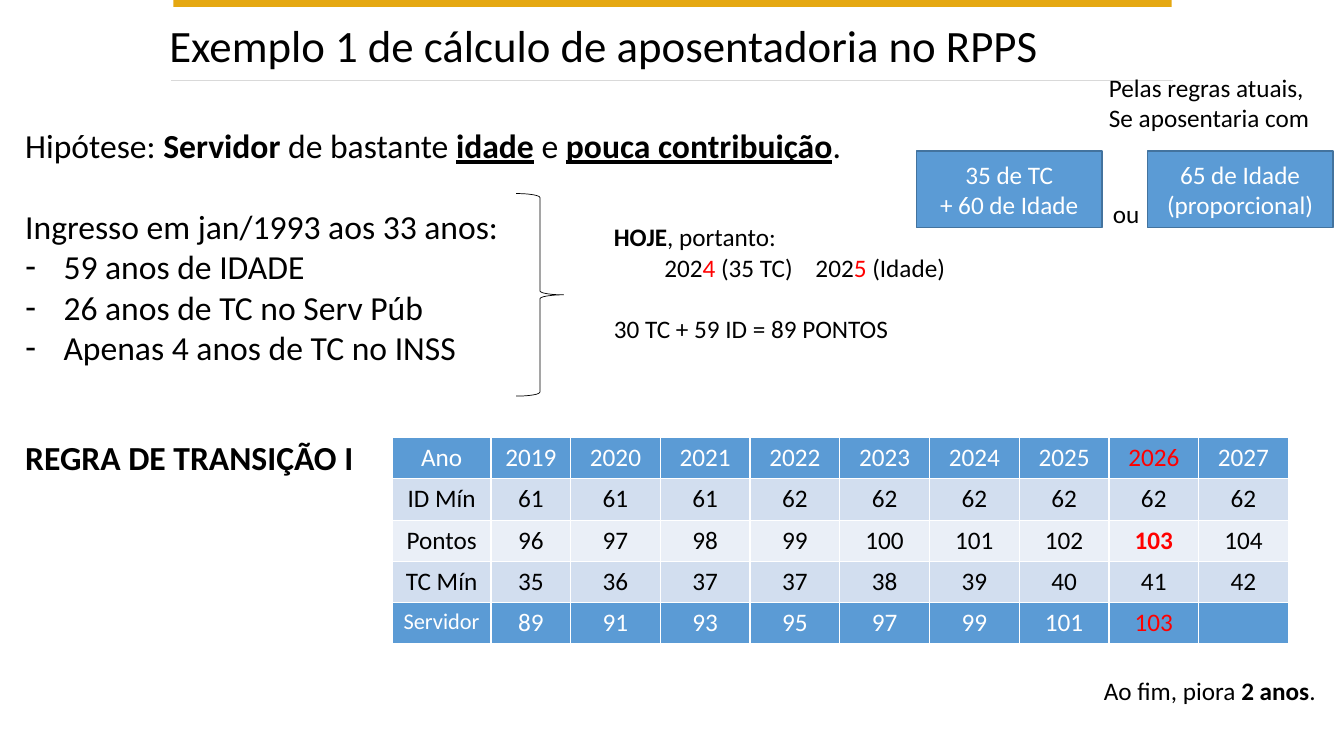
from dataclasses import dataclass

from lxml import etree
from pptx import Presentation
from pptx.dml.color import RGBColor
from pptx.enum.shapes import MSO_CONNECTOR, MSO_SHAPE
from pptx.enum.text import MSO_ANCHOR, MSO_AUTO_SIZE, PP_ALIGN
from pptx.oxml.ns import qn
from pptx.shapes.autoshape import Shape
from pptx.slide import Slide
from pptx.table import _Cell
from pptx.text.text import TextFrame, _Paragraph, _Run
from pptx.util import Emu, Pt

LEFT, CENTER = PP_ALIGN.LEFT, PP_ALIGN.CENTER
TOP, MIDDLE = MSO_ANCHOR.TOP, MSO_ANCHOR.MIDDLE
RECTANGLE, RIGHT_BRACE = MSO_SHAPE.RECTANGLE, MSO_SHAPE.RIGHT_BRACE
STRAIGHT = MSO_CONNECTOR.STRAIGHT
NO_AUTO_SIZE = MSO_AUTO_SIZE.NONE

EMU_PER_PX = 9144
FONT = "Calibri"
COLORS = {
    "black": "000000", "white": "FFFFFF", "red": "FF0000", "gold": "E5A812",
    "rule": "D9D9D9", "blue": "5B9BD5", "outline": "43739E",
    "band": "D2DEEF", "pale": "EAEFF7",
}


@dataclass(frozen=True)
class Box:
    left: int
    top: int
    width: int
    height: int


@dataclass(frozen=True)
class Span:
    text: str
    bold: bool = False
    underline: bool = False
    color: str = ""


@dataclass(frozen=True)
class Para:
    spans: tuple[Span, ...]
    gap: int = 0
    bullet: bool = False
    tabs: tuple[int, ...] = ()


@dataclass(frozen=True)
class Label:
    box: Box
    paras: tuple[Para, ...]
    wrap: bool = False


@dataclass(frozen=True)
class Row:
    values: tuple[str, ...]
    fill: str
    color: str = "black"
    marked: bool = True
    bold_mark: bool = False
    head_size: int = 18


def px(value: int) -> Emu:
    return Emu(value * EMU_PER_PX)


def rgb(name: str) -> RGBColor:
    return RGBColor.from_string(COLORS[name])


def plain(*lines: str) -> tuple[Para, ...]:
    return tuple(Para((Span(line),)) for line in lines)


def place(shape: Shape, box: Box) -> None:
    shape.left, shape.top = px(box.left), px(box.top)
    shape.width, shape.height = px(box.width), px(box.height)


def style_run(run: _Run, span: Span, size: int, color: str) -> None:
    run.font.name, run.font.size = FONT, Pt(size)
    run.font.bold, run.font.underline = span.bold, span.underline
    run.font.color.rgb = rgb(span.color or color)


def set_list_format(paragraph: _Paragraph, para: Para) -> None:
    properties = paragraph._p.get_or_add_pPr()
    indent = px(38) if para.bullet else 0
    properties.set("marL", str(indent))
    properties.set("indent", str(-indent))
    if para.bullet:
        etree.SubElement(properties, qn("a:buChar"), char="-")
    else:
        etree.SubElement(properties, qn("a:buNone"))
    if para.tabs:
        tab_list = etree.SubElement(properties, qn("a:tabLst"))
        for stop in para.tabs:
            etree.SubElement(tab_list, qn("a:tab"), pos=str(px(stop)), algn="l")


def write(frame: TextFrame, paras: tuple[Para, ...], size: int, color: str = "black",
          align: PP_ALIGN = LEFT, anchor: MSO_ANCHOR = TOP, wrap: bool = True) -> None:
    frame.auto_size, frame.word_wrap = NO_AUTO_SIZE, wrap
    frame.vertical_anchor = anchor
    for index, para in enumerate(paras):
        paragraph = frame.add_paragraph() if index else frame.paragraphs[0]
        set_list_format(paragraph, para)
        paragraph.alignment, paragraph.line_spacing = align, 1.0
        paragraph.space_before, paragraph.space_after = Pt(para.gap), Pt(0)
        for span in para.spans:
            run = paragraph.add_run()
            run.text = span.text
            style_run(run, span, size, color)


def add_rectangle(page: Slide, box: Box, fill: str, outline: str = "") -> Shape:
    shape = page.shapes.add_shape(
        RECTANGLE, px(box.left), px(box.top), px(box.width), px(box.height))
    shape.shadow.inherit = False
    shape.fill.solid()
    shape.fill.fore_color.rgb = rgb(fill)
    if outline:
        shape.line.color.rgb, shape.line.width = rgb(outline), Pt(1)
    else:
        shape.line.fill.background()
    return shape


def add_title_rule(page: Slide) -> None:
    rule = page.shapes.add_connector(STRAIGHT, px(170), px(80), px(1163), px(80))
    rule.line.color.rgb, rule.line.width = rgb("rule"), Pt(0.5)
    etree.SubElement(rule._element.spPr, qn("a:effectLst"))


def add_brace(page: Slide, box: Box) -> None:
    brace = page.shapes.add_shape(
        RIGHT_BRACE, px(box.left), px(box.top), px(box.width), px(box.height))
    brace.shadow.inherit = False
    brace.fill.background()
    brace.line.color.rgb, brace.line.width = rgb("black"), Pt(0.5)


def add_label(page: Slide, label: Label) -> None:
    box = label.box
    shape = page.shapes.add_textbox(
        px(box.left), px(box.top), px(box.width), px(box.height))
    write(shape.text_frame, label.paras, 18, wrap=label.wrap)


def add_borders(cell: _Cell) -> None:
    properties = cell._tc.get_or_add_tcPr()
    for index, side in enumerate(("lnL", "lnR", "lnT", "lnB")):
        line = etree.Element(qn(f"a:{side}"), w=str(Pt(1)))
        fill = etree.SubElement(line, qn("a:solidFill"))
        etree.SubElement(fill, qn("a:srgbClr"), val=COLORS["white"])
        properties.insert(index, line)


def add_rule_table(page: Slide, top: int, rows: tuple[Row, ...]) -> None:
    widths = (98, 79) + (89,) * 8
    table = page.shapes.add_table(len(rows), len(widths), px(389), px(top),
                                  px(sum(widths)), px(ROW_HEIGHT * len(rows))).table
    table.first_row = table.horz_banding = False
    for column, width in zip(table.columns, widths):
        column.width = px(width)
    for row_index, row in enumerate(rows):
        table.rows[row_index].height = px(ROW_HEIGHT)
        for index, value in enumerate(row.values):
            cell = table.cell(row_index, index)
            cell.fill.solid()
            cell.fill.fore_color.rgb = rgb(row.fill)
            add_borders(cell)
            cell.text = value
            paragraph = cell.text_frame.paragraphs[0]
            paragraph.alignment = CENTER
            marked = row.marked and index == MARKED_COLUMN
            span = Span(value, bold=marked and row.bold_mark, color="red" if marked else "")
            for run in paragraph.runs:
                style_run(run, span, 18 if index else row.head_size, row.color)


ROW_HEIGHT = 41
MARKED_COLUMN = 8
BODY = (
    Para((Span("Hipótese: "), Span("Servidor ", bold=True), Span("de bastante "),
          Span("idade", bold=True, underline=True), Span(" e "),
          Span("pouca contribuição", bold=True, underline=True), Span("."))),
    Para((Span("Ingresso em jan/1993 aos 33 anos:"),), gap=29),
    *(Para((Span(item),), bullet=True) for item in (
        "59 anos de IDADE", "26 anos de TC no Serv Púb", "Apenas 4 anos de TC no INSS")),
    Para((Span("REGRA DE TRANSIÇÃO I", bold=True),), gap=50),
)
CONDITIONS = (
    (Box(909, 150, 184, 76), plain("35 de TC", "+ 60 de Idade")),
    (Box(1138, 150, 184, 76), plain("65 de Idade", "(proporcional)")),
)
LABELS = (
    Label(Box(1094, 192, 47, 40), plain("ou")),
    Label(Box(1090, 67, 221, 71), plain("Pelas regras atuais,", "Se aposentaria com")),
    Label(Box(599, 215, 724, 162), (
        Para((Span("HOJE", bold=True), Span(", portanto:"))),
        Para((Span("\t202"), Span("4 ", color="red"), Span("(35 TC)\t202"),
              Span("5 ", color="red"), Span("(Idade)")), tabs=(116, 350)),
        Para((Span("30 TC + 59 ID = 89 PONTOS"),), gap=22)), wrap=True),
    Label(Box(1085, 665, 232, 40), (
        Para((Span("Ao fim, piora "), Span("2 anos", bold=True), Span("."))),)),
)
RULE_ROWS = (
    Row(("Ano", *(str(year) for year in range(2019, 2028))), "blue", "white"),
    Row(("ID Mín", *("61",) * 3, *("62",) * 6), "band", marked=False),
    Row(("Pontos", *(str(points) for points in range(96, 105))), "pale", bold_mark=True),
    Row(("TC Mín", "35", "36", "37", "37", "38", "39", "40", "41", "42"), "band", marked=False),
)
SERVER_ROW = Row(("Servidor", *(str(points) for points in range(89, 104, 2)), ""),
                 "blue", "white", head_size=16)


def main() -> None:
    deck = Presentation()
    deck.slide_width, deck.slide_height = px(1333), px(750)
    page = deck.slides.add_slide(deck.slide_layouts[1])
    title, body = page.shapes.title, page.placeholders[1]
    place(title, Box(158, 12, 1019, 64))
    write(title.text_frame, plain("Exemplo 1 de cálculo de aposentadoria no RPPS"), 32,
          anchor=MIDDLE)
    place(body, Box(15, 119, 1218, 424))
    write(body.text_frame, BODY, 24)
    add_rectangle(page, Box(172, 0, 990, 7), "gold")
    add_title_rule(page)
    for box, paras in CONDITIONS:
        shape = add_rectangle(page, box, "blue", "outline")
        write(shape.text_frame, paras, 18, "white", CENTER, MIDDLE)
    for label in LABELS:
        add_label(page, label)
    add_brace(page, Box(512, 192, 47, 201))
    add_rule_table(page, 434, RULE_ROWS)
    add_rule_table(page, 598, (SERVER_ROW,))
    deck.save("out.pptx")


if __name__ == "__main__":
    main()
